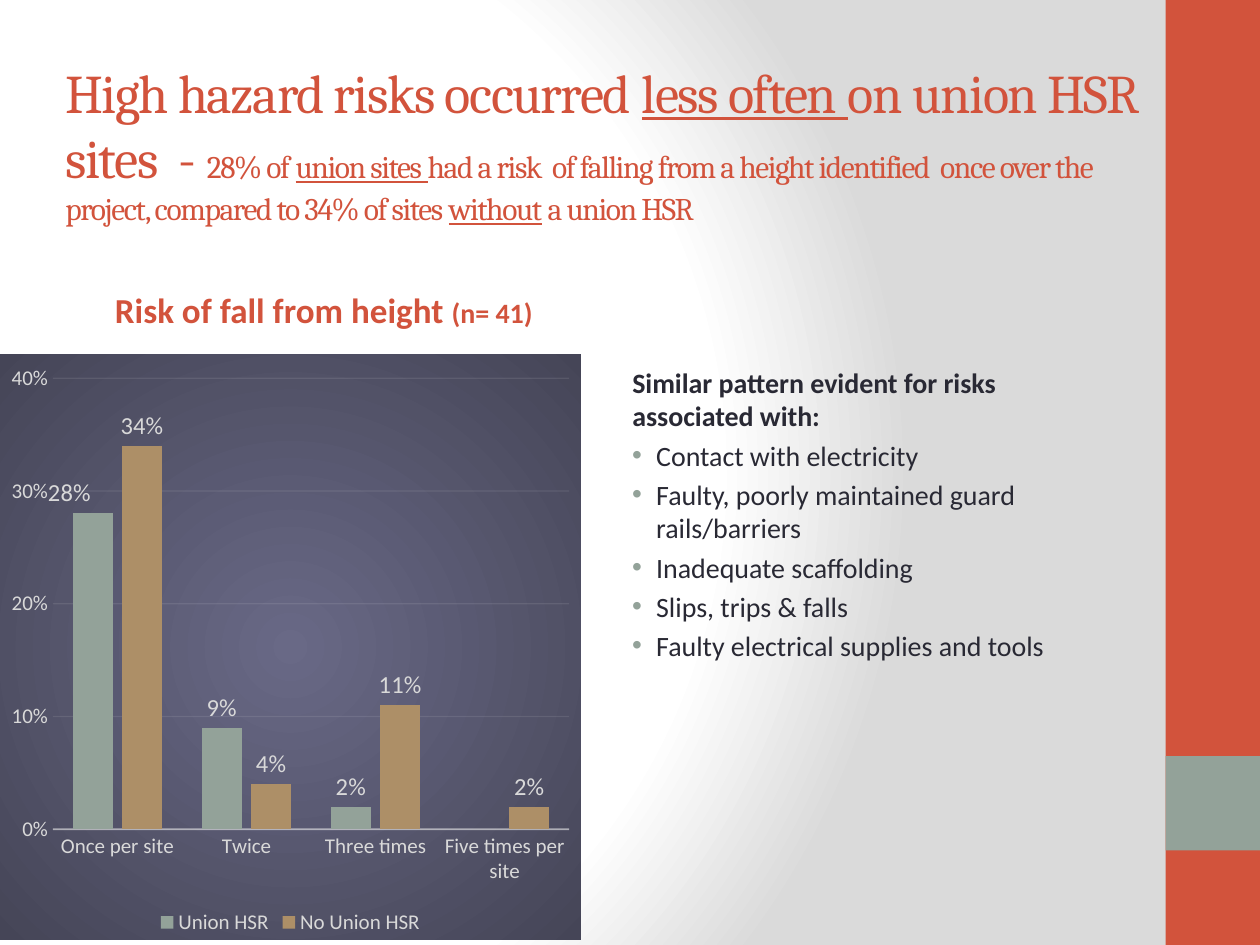
import pptx
import pptx.util
import pptx.chart.data
import pptx.dml.color
import pptx.enum.chart
import pptx.enum.shapes
import pptx.enum.text
import pptx.oxml
import pptx.oxml.ns

Inches, Pt = pptx.util.Inches, pptx.util.Pt
qn = pptx.oxml.ns.qn
ALIGN, ANCHOR = pptx.enum.text.PP_ALIGN, pptx.enum.text.MSO_ANCHOR
NS = pptx.oxml.ns.nsdecls("a", "c")

RED, SAGE, TAN, INK, PALE, LINE = "D2533C", "93A299", "AD8F67", "292934", "D9D9D9", "F2F2F2"

SIDEBAR = [((9.25, 0, 0.75, 7.5), RED), ((9.25, 6, 0.75, 0.75), SAGE)]

TITLE = [
    ("High hazard risks occurred ", 31.1, False),
    ("less often ", 31.1, True),
    ("on union HSR sites  - ", 31.1, False),
    ("28% of ", 18, False),
    ("union sites ", 18, True),
    ("had a risk  of falling from a height identified  once over the project, "
     "compared to 34% of sites ", 18, False),
    ("without", 18, True),
    (" a union HSR", 18, False),
]
CHART_HEADING = [("Risk of fall from height ", 20), ("(n= 41) ", 16)]
LEAD = "Similar pattern evident for risks associated with:"
RISKS = [
    "Contact with electricity",
    "Faulty, poorly maintained guard rails/barriers",
    "Inadequate scaffolding",
    "Slips, trips & falls",
    "Faulty electrical supplies and tools",
]
CATEGORIES = ["Once per site", "Twice", "Three times", "Five times per site"]
SERIES = [
    ("Union HSR", [0.28, 0.09, 0.02, None], SAGE),
    ("No Union HSR", [0.34, 0.04, 0.11, 0.02], TAN),
]


def rgb(value):
    return pptx.dml.color.RGBColor.from_string(value)


def style(font, size, color, name="Calibri", bold=False):
    font.size, font.name, font.bold = Pt(size), name, bold
    font.color.rgb = rgb(color)


def xml(text):
    return pptx.oxml.parse_xml(text)


def radial(stops, left, top, right, bottom):
    gs = "".join(f'<a:gs pos="{pos * 1000}"><a:srgbClr val="{color}"/></a:gs>' for pos, color in stops)
    return (f'<a:gradFill {NS} rotWithShape="1"><a:gsLst>{gs}</a:gsLst><a:path path="circle">'
            f'<a:fillToRect l="{left * 1000}" t="{top * 1000}" r="{right * 1000}" b="{bottom * 1000}"/>'
            '</a:path></a:gradFill>')


def text_box(s, at, anchor):
    tf = s.shapes.add_textbox(*map(Inches, at)).text_frame
    tf.word_wrap, tf.vertical_anchor = True, anchor
    return tf


def add_run(p, text):
    r = p.add_run()
    r.text = text
    return r


def space_and_indent(p, left=0, hanging=0, bullet=None):
    pPr = p._p.get_or_add_pPr()
    pPr.set("marL", str(Inches(left)))
    pPr.set("indent", str(-Inches(hanging)))
    pPr.append(xml(f'<a:spcBef {NS}><a:spcPct val="20000"/></a:spcBef>'))
    if bullet:
        pPr.append(xml(f'<a:buClr {NS}><a:srgbClr val="{SAGE}"/></a:buClr>'))
        pPr.append(xml(f'<a:buFont {NS} typeface="Arial"/>'))
        pPr.append(xml(f'<a:buChar {NS} char="{bullet}"/>'))


def faint_line(line, width, opacity):
    line.color.rgb, line.width = rgb(LINE), Pt(width)
    color = line._ln.find(".//" + qn("a:srgbClr"))
    color.append(xml(f'<a:alpha {NS} val="{opacity * 1000}"/>'))


def add_risk_chart(s):
    data = pptx.chart.data.CategoryChartData(number_format="0%")
    data.categories = CATEGORIES
    for name, values, _ in SERIES:
        data.add_series(name, values)
    kind = pptx.enum.chart.XL_CHART_TYPE.COLUMN_CLUSTERED
    chart = s.shapes.add_chart(kind, *map(Inches, (0, 2.81, 4.61, 4.65)), data).chart
    style(chart.font, 10, INK)
    chart.has_title = False
    chart.has_legend = True
    chart.legend.position = pptx.enum.chart.XL_LEGEND_POSITION.BOTTOM
    chart.legend.include_in_layout = False
    style(chart.legend.font, 12, PALE)

    for axis in (chart.category_axis, chart.value_axis):
        axis.major_tick_mark = axis.minor_tick_mark = pptx.enum.chart.XL_TICK_MARK.NONE
        style(axis.tick_labels.font, 12, PALE)
    faint_line(chart.category_axis.format.line, 1, 54)
    va = chart.value_axis
    va.minimum_scale, va.maximum_scale, va.major_unit = 0, 0.4, 0.1
    va.tick_labels.number_format, va.tick_labels.number_format_is_linked = "0%", False
    va.format.line.fill.background()
    faint_line(va.major_gridlines.format.line, 0.75, 10)

    plot = chart.plots[0]
    plot.gap_width, plot.overlap, plot.vary_by_categories = 100, -24, False
    outside = pptx.enum.chart.XL_LABEL_POSITION.OUTSIDE_END
    for series, (_, _, color) in zip(plot.series, SERIES):
        series.format.fill.solid()
        series.format.fill.fore_color.rgb = rgb(color)
        labels = series.data_labels
        labels.show_value, labels.position = True, outside
        labels.number_format, labels.number_format_is_linked = "0%", False
        style(labels.font, 14, PALE)

    first = plot.series[0].points[0].data_label
    style(first.font, 14, PALE)
    first.position = outside
    idx = plot.series[0].data_labels._element.find(qn("c:dLbl")).find(qn("c:idx"))
    idx.addnext(xml(f'<c:numFmt {NS} formatCode="0%" sourceLinked="0"/>'))
    idx.addnext(xml(f'<c:layout {NS}><c:manualLayout><c:x val="-0.04"/><c:y val="0"/>'
                    '</c:manualLayout></c:layout>'))

    backdrop = radial([(0, "696986"), (100, "454557")], 50, 50, 50, 50)
    chart._chartSpace.find(qn("c:chart")).addnext(
        xml(f'<c:spPr {NS}>{backdrop}<a:ln><a:noFill/></a:ln></c:spPr>'))


def main():
    prs = pptx.Presentation()
    prs.slide_width, prs.slide_height = Inches(10), Inches(7.5)
    s = prs.slides.add_slide(prs.slide_layouts[6])
    s.background.fill.solid()
    solid = s._element.find(".//" + qn("p:bgPr")).find(qn("a:solidFill"))
    solid.getparent().replace(
        solid, xml(radial([(0, "FFFFFF"), (75, "FFFFFF"), (100, "DADADA")], 20, 50, 100, 50)))

    for at, color in SIDEBAR:
        sp = s.shapes.add_shape(pptx.enum.shapes.MSO_SHAPE.RECTANGLE, *map(Inches, at))
        sp.shadow.inherit = False
        sp.fill.solid()
        sp.fill.fore_color.rgb = rgb(color)
        sp.line.fill.background()

    p = text_box(s, (0.42, 0.23, 8.78, 1.81), ANCHOR.MIDDLE).paragraphs[0]
    for text, size, underlined in TITLE:
        r = add_run(p, text)
        style(r.font, size, RED, "Cambria")
        r.font.underline = underlined
        r._r.get_or_add_rPr().set("spc", "-80")

    p = text_box(s, (0.42, 2.01, 4.35, 0.66), ANCHOR.BOTTOM).paragraphs[0]
    p.alignment = ALIGN.CENTER
    space_and_indent(p)
    for text, size in CHART_HEADING:
        style(add_run(p, text).font, size, RED, bold=True)

    add_risk_chart(s)

    tf = text_box(s, (4.83, 2.85, 4, 3.85), ANCHOR.TOP)
    tf.text = "\n".join([LEAD] + RISKS)
    for i, p in enumerate(tf.paragraphs):
        if i == 0:
            space_and_indent(p, 0.09)
        else:
            space_and_indent(p, 0.28, 0.19, "•")
        style(p.runs[0].font, 16, INK, bold=i == 0)

    prs.save("out.pptx")


if __name__ == "__main__":
    main()
